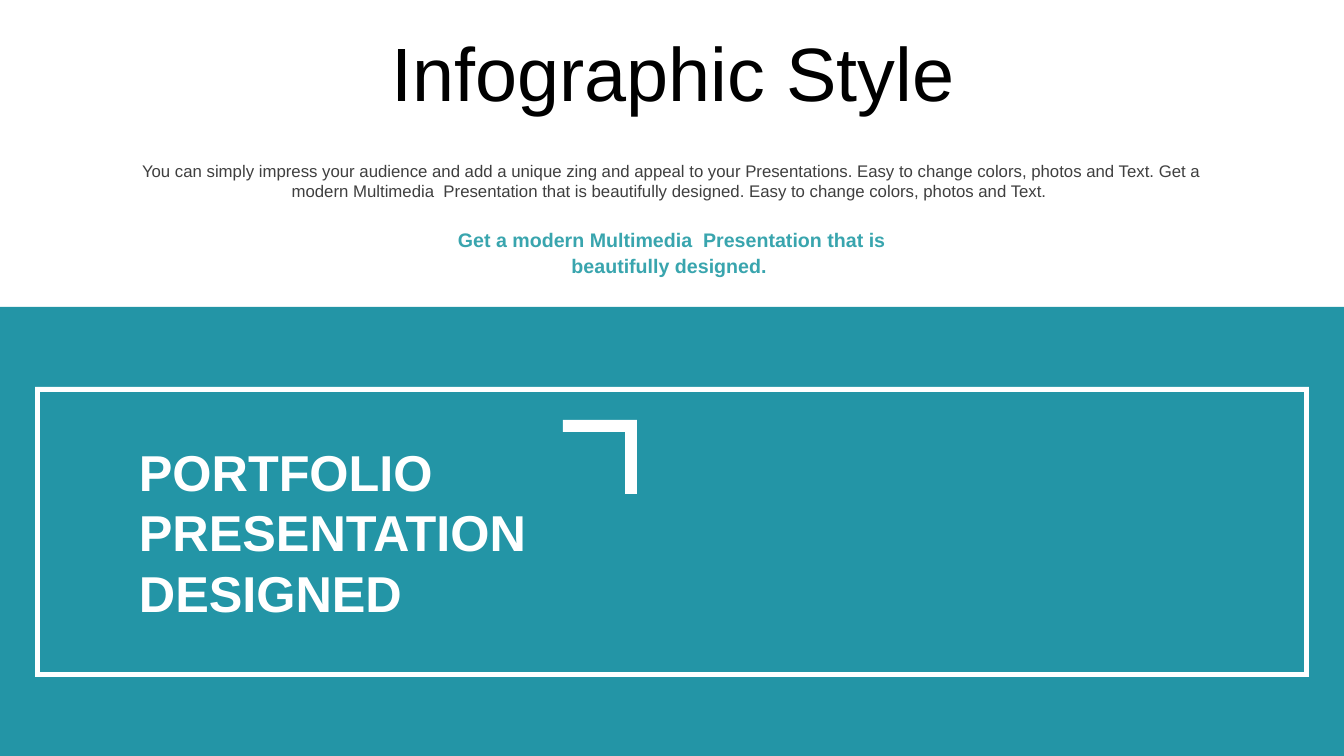
from pptx import Presentation
from pptx import util as u
from pptx.dml.color import RGBColor
from pptx.enum import shapes, text

PX = 914400 / 100.8
WIDTH, HEIGHT = 1344, 756
TEAL, WHITE = "2395A6", "FFFFFF"


def px(*lengths):
    """Turn pixel lengths into EMU."""
    return [u.Emu(round(length * PX)) for length in lengths]


def rgb(code):
    return RGBColor.from_string(code)


deck = Presentation()
deck.slide_width, deck.slide_height = px(WIDTH, HEIGHT)
slide = deck.slides.add_slide(deck.slide_layouts[6])

# Teal band, white frame and corner mark
preset = shapes.MSO_SHAPE
panels = [
    (preset.RECTANGLE, (0, 307, WIDTH, HEIGHT - 307), TEAL, [], 0),
    (preset.FRAME, (35, 387, 1274, 290), WHITE, [0.017], 0),
    (preset.CORNER, (563, 420, 74, 74), WHITE, [0.16, 0.16], 180),
]
for kind, place, color, adjustments, rotation in panels:
    panel = slide.shapes.add_shape(kind, *px(*place))
    panel.shadow.inherit = False
    panel.fill.solid()
    panel.fill.fore_color.rgb = rgb(color)
    panel.line.fill.background()
    panel.rotation = rotation
    for index, value in enumerate(adjustments):
        panel.adjustments[index] = value

# Title, introduction, tagline and headline
align, anchor = text.PP_ALIGN, text.MSO_ANCHOR
passages = [
    ("Infographic Style", (35, 31, 1276, 80), "000000", anchor.TOP,
     {"size": u.Pt(54), "bold": False},
     {"alignment": align.CENTER, "line_spacing": 0.9}),
    ("You can simply impress your audience and add a unique zing and appeal "
     "to your Presentations. Easy to change colors, photos and Text. Get a "
     "modern Multimedia  Presentation that is beautifully designed. "
     "Easy to change colors, photos and Text. ",
     (129, 156, 1086, 50), "3F3F3F", anchor.TOP,
     {"size": u.Pt(12), "bold": False},
     {"alignment": align.CENTER}),
    ("Get a modern Multimedia  Presentation that is beautifully designed. ",
     (414, 221, 516, 62), "39A5AE", anchor.TOP,
     {"size": u.Pt(14), "bold": True},
     {"alignment": align.CENTER, "line_spacing": 1.1}),
    ("PORTFOLIO PRESENTATION DESIGNED", (129, 427, 412, 209), WHITE,
     anchor.MIDDLE,
     {"size": u.Pt(36), "bold": True},
     {"alignment": align.JUSTIFY}),
]
for wording, place, color, vertical, font_format, paragraph_format in passages:
    frame = slide.shapes.add_textbox(*px(*place)).text_frame
    frame.word_wrap = True
    frame.vertical_anchor = vertical
    paragraph = frame.paragraphs[0]
    for name, value in paragraph_format.items():
        setattr(paragraph, name, value)
    run = paragraph.add_run()
    run.text = wording
    run.font.color.rgb = rgb(color)
    for name, value in {"name": "Arial", **font_format}.items():
        setattr(run.font, name, value)

deck.save("out.pptx")
